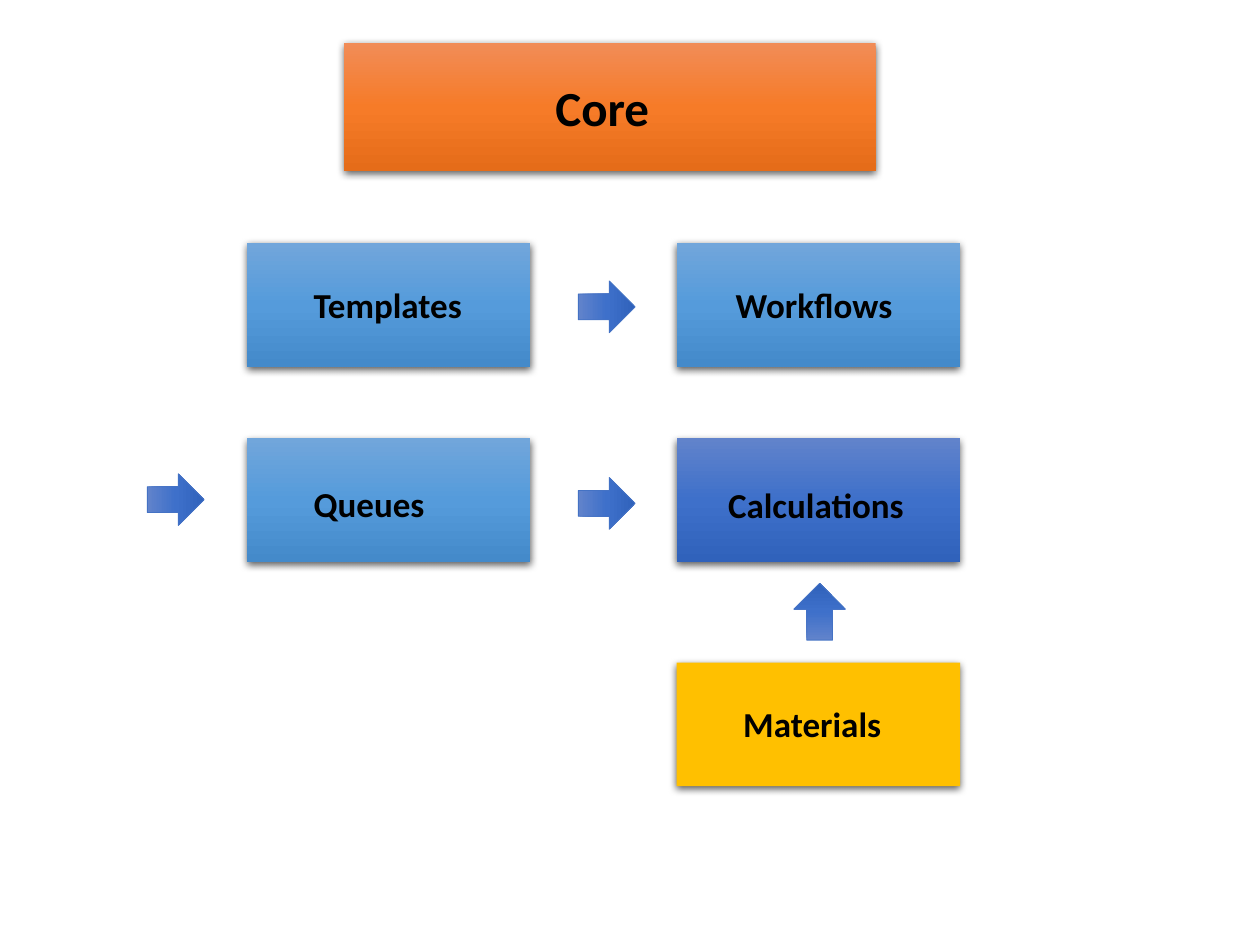
"""Draw the core block diagram of templates, workflows, queues and calculations."""
from copy import deepcopy
from dataclasses import dataclass

from lxml import etree
from pptx import Presentation
from pptx.dml.color import RGBColor
from pptx.enum.shapes import MSO_SHAPE
from pptx.enum.text import MSO_AUTO_SIZE
from pptx.oxml.ns import qn
from pptx.util import Inches, Pt

RECT = MSO_SHAPE.RECTANGLE
DOWN_ARROW = MSO_SHAPE.DOWN_ARROW
FIT_SHAPE = MSO_AUTO_SIZE.SHAPE_TO_FIT_TEXT

ORANGE = ("F18C57", "F67B28", "E56C19")
LIGHT_BLUE = ("71A6DB", "559BDB", "448ACA")
BLUE = ("6183CB", "3E70CA", "3062BB")
GOLD = ("FFC000",)

COL_1, COL_2 = 1.96, 5.37
ROW_1, ROW_2, ROW_3 = 1.93, 3.48, 5.26
BOX_W, BOX_H = 2.25, 0.98
ARROW_W, ARROW_H = 0.41, 0.45
RIGHT, UP = 270, 180


@dataclass
class Label:
    text: str
    left: float
    top: float
    width: float
    height: float = 0.44
    size: int = 20


@dataclass
class Block:
    left: float
    top: float
    colors: tuple[str, ...]
    label: Label
    width: float = BOX_W
    height: float = BOX_H


@dataclass
class Arrow:
    left: float
    top: float
    rotation: int


BLOCKS = [
    Block(2.73, 0.34, ORANGE, Label("Core", 4.31, 0.57, 1.06, 0.57, 28), 4.22, 1.02),
    Block(COL_2, ROW_2, BLUE, Label("Calculations", 5.68, 3.79, 1.82)),
    Block(COL_1, ROW_1, LIGHT_BLUE, Label("Templates", 2.39, 2.2, 1.51)),
    Block(COL_2, ROW_1, LIGHT_BLUE, Label("Workflows", 5.74, 2.2, 1.51)),
    Block(COL_1, ROW_2, LIGHT_BLUE, Label("Queues", 2.39, 3.78, 1.39)),
    Block(COL_2, ROW_3, GOLD, Label("Materials", 5.8, 5.53, 1.39)),
]
ARROWS = [
    Arrow(4.61, 2.21, RIGHT),
    Arrow(4.61, 3.77, RIGHT),
    Arrow(6.3, 4.63, UP),
    Arrow(1.19, 3.74, RIGHT),
]


def rgb(color: str) -> RGBColor:
    return RGBColor.from_string(color)


def set_fill(sp, colors: tuple[str, ...]) -> None:
    if len(colors) == 1:
        sp.fill.solid()
        sp.fill.fore_color.rgb = rgb(colors[0])
        return
    sp.fill.gradient()
    sp.fill.gradient_angle = 270
    stops = sp._element.spPr.find(f".//{qn('a:gsLst')}")
    stops.insert(1, deepcopy(stops[0]))
    for stop, position, color in zip(sp.fill.gradient_stops, (0, 0.5, 1), colors):
        stop.position = position
        stop.color.rgb = rgb(color)


def add_shadow(sp) -> None:
    effects = sp._element.spPr.find(qn("a:effectLst"))
    shadow = etree.SubElement(
        effects, qn("a:outerShdw"), blurRad=str(Pt(4.5)), dist=str(Pt(1.5)),
        dir="5400000", algn="ctr", rotWithShape="0")
    color = etree.SubElement(shadow, qn("a:srgbClr"), val="000000")
    etree.SubElement(color, qn("a:alpha"), val="63000")


def add_shape(slide, kind, left: float, top: float, width: float, height: float,
              colors: tuple[str, ...]):
    sp = slide.shapes.add_shape(kind, Inches(left), Inches(top), Inches(width), Inches(height))
    sp.shadow.inherit = False
    set_fill(sp, colors)
    return sp


def add_text(slide, text: str, *, left: float, top: float, width: float, height: float,
             size: int, color: str = "000000", bold: bool = True) -> None:
    box = slide.shapes.add_textbox(Inches(left), Inches(top), Inches(width), Inches(height))
    tf = box.text_frame
    tf.word_wrap = True
    tf.auto_size = FIT_SHAPE
    r = tf.paragraphs[0].add_run()
    r.text = text
    r.font.name = "Calibri"
    r.font.size = Pt(size)
    r.font.bold = bold
    r.font.color.rgb = rgb(color)


def draw_block(slide, block: Block) -> None:
    sp = add_shape(slide, RECT, block.left, block.top, block.width, block.height, block.colors)
    sp.line.fill.background()
    add_shadow(sp)
    label = block.label
    add_text(slide, label.text, left=label.left, top=label.top, width=label.width,
             height=label.height, size=label.size)


def draw_arrow(slide, arrow: Arrow) -> None:
    sp = add_shape(slide, DOWN_ARROW, arrow.left, arrow.top, ARROW_W, ARROW_H, BLUE)
    sp.rotation = arrow.rotation
    sp.line.color.rgb = rgb("4472C4")
    sp.line.width = Pt(0.5)


def main() -> None:
    prs = Presentation()
    prs.slide_width, prs.slide_height = Inches(10), Inches(7.5)
    slide = prs.slides.add_slide(prs.slide_layouts[6])
    for block in BLOCKS:
        draw_block(slide, block)
    for arrow in ARROWS:
        draw_arrow(slide, arrow)
    prs.save("out.pptx")


if __name__ == "__main__":
    main()
